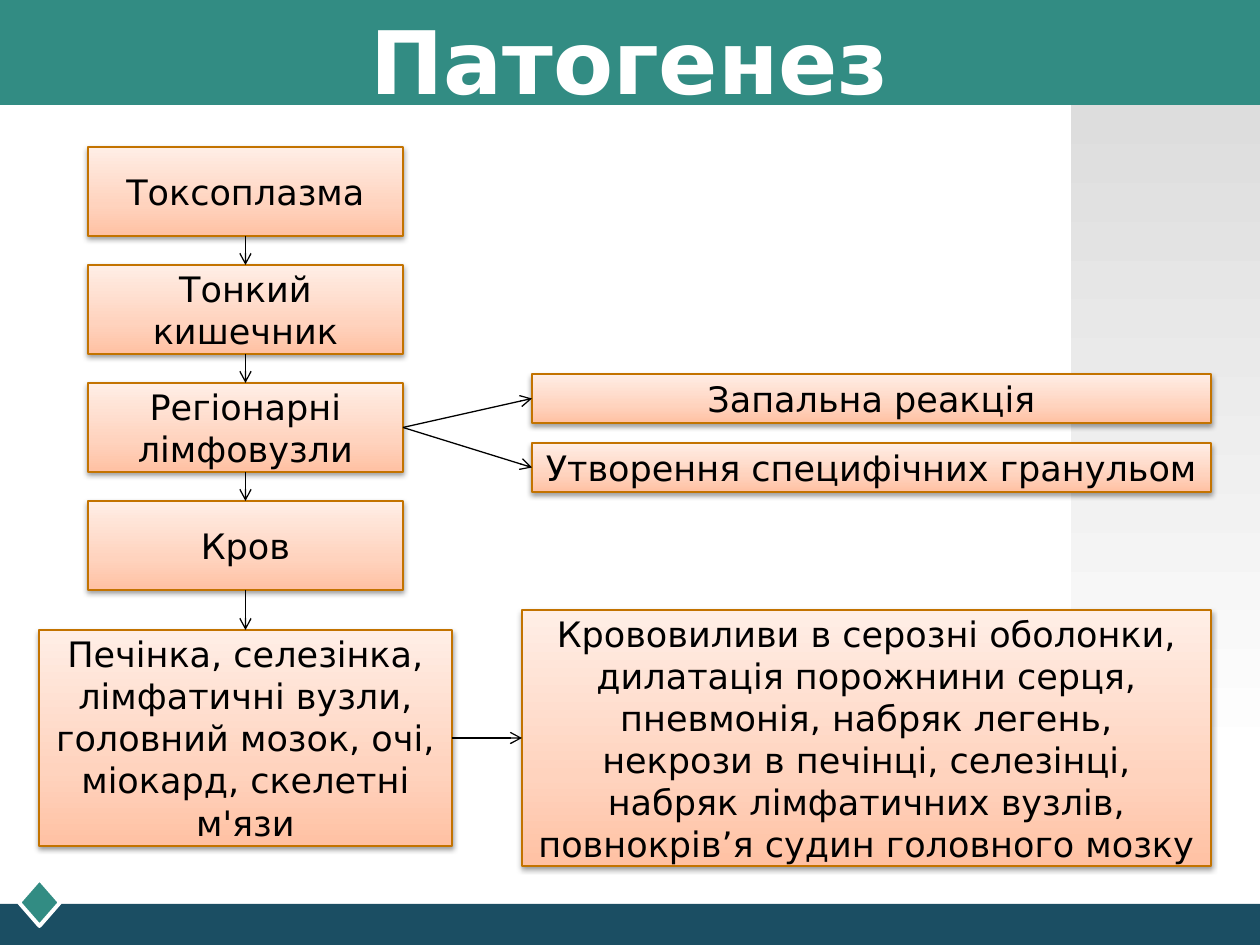
from dataclasses import dataclass

import pptx
import pptx.dml.color
import pptx.enum.shapes
import pptx.enum.text
import pptx.oxml
import pptx.oxml.ns
import pptx.util

EMU_PER_PX = 914400 / 126
SHAPE = pptx.enum.shapes.MSO_SHAPE
TOP, LEFT, BOTTOM, RIGHT = range(4)


@dataclass(frozen=True)
class Theme:
    font: str = "DejaVu Sans"
    title_size: int = 50
    body_size: int = 20
    line_width: float = 0.75
    teal: str = "328C83"
    navy: str = "1B4E63"
    border: str = "C37300"
    black: str = "000000"
    white: str = "FFFFFF"
    peach: tuple = ((0, "FFC1A3"), (35, "FFD3BE"), (100, "FFEEE6"))
    grey: tuple = ((0, "DDDDDD"), (100, "FFFFFF"))


THEME = Theme()


def px(length):
    return pptx.util.Emu(round(length * EMU_PER_PX))


def rgb(value):
    return pptx.dml.color.RGBColor.from_string(value)


def drawing_xml(tag, attributes="", content=""):
    namespace = pptx.oxml.ns.nsdecls("a")
    return pptx.oxml.parse_xml(f"<a:{tag} {namespace} {attributes}>{content}</a:{tag}>")


def shape_property(shape, tag):
    return shape.element.spPr.find(pptx.oxml.ns.qn(tag))


def add_panel(slide, kind, box, fill, border=None, width=THEME.line_width):
    panel = slide.shapes.add_shape(kind, *map(px, box))
    panel.shadow.inherit = False
    panel.fill.solid()
    panel.fill.fore_color.rgb = rgb(fill)
    if border:
        panel.line.color.rgb = rgb(border)
        panel.line.width = pptx.util.Pt(width)
    else:
        panel.line.fill.background()
    return panel


def set_gradient(panel, stops, angle):
    """Replace the solid fill with a linear gradient."""
    colours = "".join(
        f'<a:gs pos="{position * 1000}"><a:srgbClr val="{colour}"/></a:gs>'
        for position, colour in stops
    )
    gradient = drawing_xml(
        "gradFill", 'rotWithShape="1"',
        f'<a:gsLst>{colours}</a:gsLst><a:lin ang="{angle * 60000}" scaled="0"/>',
    )
    panel.element.spPr.replace(shape_property(panel, "a:solidFill"), gradient)


def add_soft_shadow(panel):
    shape_property(panel, "a:effectLst").append(drawing_xml(
        "outerShdw", 'blurRad="40000" dist="20000" dir="5400000" rotWithShape="0"',
        f'<a:srgbClr val="{THEME.black}"><a:alpha val="38000"/></a:srgbClr>',
    ))


def write(shape, paragraphs, size, colour, bold=False):
    frame = shape.text_frame
    frame.word_wrap = True
    frame.vertical_anchor = pptx.enum.text.MSO_ANCHOR.MIDDLE
    for index, text in enumerate(paragraphs):
        paragraph = frame.add_paragraph() if index else frame.paragraphs[0]
        paragraph.alignment = pptx.enum.text.PP_ALIGN.CENTER
        run = paragraph.add_run()
        run.text = text
        run.font.name = THEME.font
        run.font.size = pptx.util.Pt(size)
        run.font.bold = bold
        run.font.color.rgb = rgb(colour)


def add_step(slide, box, *paragraphs):
    step = add_panel(slide, SHAPE.RECTANGLE, box, THEME.white, THEME.border)
    set_gradient(step, THEME.peach, 270)
    add_soft_shadow(step)
    write(step, paragraphs, THEME.body_size, THEME.black)
    return step


def add_arrow(slide, source, source_side, target, target_side):
    arrow = slide.shapes.add_connector(pptx.enum.shapes.MSO_CONNECTOR.STRAIGHT, 0, 0, 0, 0)
    arrow.begin_connect(source, source_side)
    arrow.end_connect(target, target_side)
    arrow.line.color.rgb = rgb(THEME.black)
    arrow.line.width = pptx.util.Pt(THEME.line_width)
    shape_property(arrow, "a:ln").append(drawing_xml("tailEnd", 'type="arrow"'))
    arrow.element.spPr.append(drawing_xml("effectLst"))


def draw_header(slide, box):
    left, top, width, _ = box
    add_panel(slide, SHAPE.RECTANGLE, box, THEME.teal)
    title = slide.shapes.add_textbox(
        *map(px, (left + 63, top + 21, width - 126, 78)))
    write(title, ["Патогенез"], THEME.title_size, THEME.white, bold=True)


def draw_footer(slide, box):
    left, top, _, _ = box
    add_panel(slide, SHAPE.RECTANGLE, box, THEME.navy)
    add_panel(slide, SHAPE.DIAMOND, (left + 19, top - 25, 41, 47),
              THEME.teal, THEME.white, 2.25)


def draw_side_band(slide, box):
    band = add_panel(slide, SHAPE.RECTANGLE, box, THEME.white)
    set_gradient(band, THEME.grey, 90)


def draw_stack(slide, box, texts, gap):
    """Fill the box with equal steps, one below the other."""
    left, top, width, height = box
    step_height = (height - gap * (len(texts) - 1)) / len(texts)
    return [
        add_step(slide, (left, top + index * (step_height + gap), width, step_height), text)
        for index, text in enumerate(texts)
    ]


def draw_pathogenesis(slide, box):
    left, top, width, _ = box
    route = draw_stack(
        slide, (left + 49, top, 315, 443),
        ["Токсоплазма", "Тонкий кишечник", "Регіонарні лімфовузли", "Кров"], 29)
    reactions = draw_stack(
        slide, (left + width - 679, top + 227, 679, 118),
        ["Запальна реакція", "Утворення специфічних гранульом"], 20)
    organs = add_step(
        slide, (left, top + 483, 413, 216),
        "Печінка, селезінка, лімфатичні вузли, головний мозок, очі, міокард, скелетні м'язи")
    lesions = add_step(
        slide, (left + width - 689, top + 463, 689, 256),
        "Крововиливи в серозні оболонки, дилатація порожнини серця, пневмонія, набряк легень,",
        "некрози в печінці, селезінці, набряк лімфатичних вузлів, "
        "повнокрів’я судин головного мозку")

    descent = route + [organs]
    for upper, lower in zip(descent, descent[1:]):
        add_arrow(slide, upper, BOTTOM, lower, TOP)
    lymph_nodes = route[2]
    for source, target in [(lymph_nodes, reaction) for reaction in reactions] + [(organs, lesions)]:
        add_arrow(slide, source, RIGHT, target, LEFT)


def main():
    deck = pptx.Presentation()
    deck.slide_width, deck.slide_height = px(1260), px(945)
    slide = deck.slides.add_slide(deck.slide_layouts[6])
    draw_footer(slide, (0, 904, 1260, 41))
    draw_side_band(slide, (1071, 105, 189, 661))
    draw_header(slide, (0, 0, 1260, 105))
    draw_pathogenesis(slide, (39, 147, 1172, 719))
    deck.save("out.pptx")


if __name__ == "__main__":
    main()
